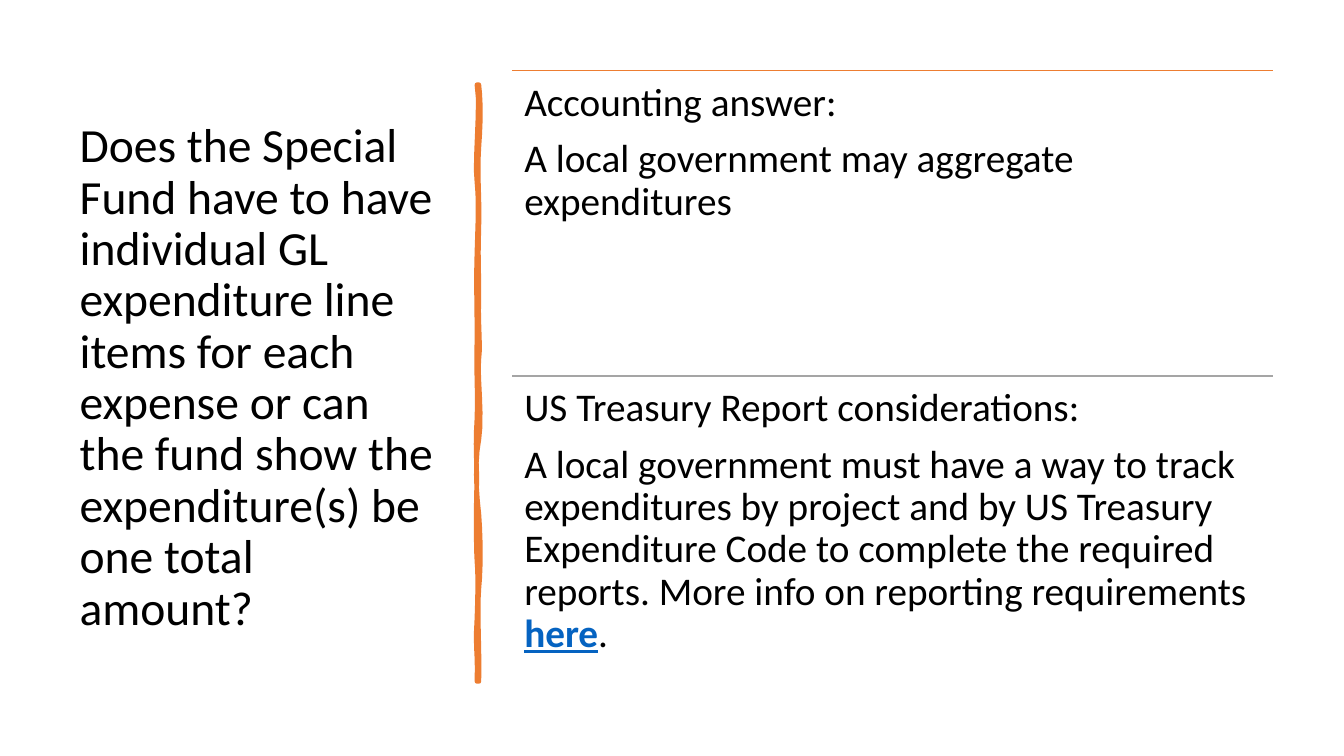
"""Build the slide on individual expenditure lines and Treasury reporting."""
from dataclasses import dataclass

from lxml import etree
from pptx import Presentation
from pptx import util as u
from pptx.dml.color import RGBColor
from pptx.enum import shapes, text
from pptx.oxml.ns import qn

FONT = "Calibri"
BLACK, ORANGE, GRAY, LINK_BLUE = "000000", "ED7D31", "A5A5A5", "0563C1"
ANSWER_LEFT, ANSWER_TOP, ANSWER_WIDTH, ANSWER_HEIGHT = 5.08, 0.7, 7.55, 3.03
CURVE_STEPS = 6
STROKE_START = (4.75, 0.84)
STROKE_CURVES = [
    (4.77, 1.02, 4.77, 1.19, 4.75, 1.46),
    (4.73, 1.73, 4.76, 1.95, 4.75, 2.26),
    (4.74, 2.57, 4.75, 2.62, 4.75, 2.94),
    (4.74, 3.25, 4.77, 3.42, 4.75, 3.56),
    (4.73, 3.7, 4.79, 4.14, 4.75, 4.36),
    (4.71, 4.57, 4.72, 4.84, 4.75, 5.1),
    (4.77, 5.36, 4.77, 5.64, 4.75, 5.84),
    (4.73, 6.03, 4.76, 6.5, 4.75, 6.76),
    (4.74, 6.76, 4.73, 6.76, 4.73, 6.76),
    (4.74, 6.46, 4.71, 6.44, 4.73, 6.13),
    (4.74, 5.83, 4.74, 5.7, 4.73, 5.57),
    (4.72, 5.44, 4.72, 4.95, 4.73, 4.77),
    (4.73, 4.59, 4.71, 4.45, 4.73, 4.15),
    (4.74, 3.86, 4.72, 3.73, 4.73, 3.35),
    (4.73, 2.98, 4.72, 2.81, 4.73, 2.5),
    (4.74, 2.18, 4.75, 2.0, 4.73, 1.81),
    (4.7, 1.63, 4.77, 1.04, 4.73, 0.84),
]


@dataclass
class Answer:
    heading: str
    body: str
    rule_color: str
    link: str = ""
    ending: str = ""


QUESTION = (
    "Does the Special Fund have to have individual GL expenditure line items for each "
    "expense or can the fund show the expenditure(s) be one total amount?"
)
ANSWERS = [
    Answer("Accounting answer:", "A local government may aggregate expenditures", ORANGE),
    Answer(
        "US Treasury Report considerations:",
        "A local government must have a way to track expenditures by project and by "
        "US Treasury Expenditure Code to complete the required reports. "
        "More info on reporting requirements ",
        GRAY,
        "here",
        ".",
    ),
]


def rgb(color: str) -> RGBColor:
    return RGBColor.from_string(color)


def format_run(run, size: float, color: str = BLACK) -> None:
    run.font.name = FONT
    run.font.size = u.Pt(size)
    run.font.color.rgb = rgb(color)


def add_question(slide) -> None:
    question = slide.shapes.title
    question.left, question.top = u.Inches(0.69), u.Inches(0.7)
    question.width, question.height = u.Inches(3.74), u.Inches(6.11)
    frame = question.text_frame
    frame.text = QUESTION
    frame.word_wrap = True
    frame.auto_size = text.MSO_AUTO_SIZE.NONE
    frame.vertical_anchor = text.MSO_ANCHOR.MIDDLE
    paragraph = frame.paragraphs[0]
    paragraph.alignment = text.PP_ALIGN.LEFT
    paragraph.line_spacing = 0.9
    format_run(paragraph.runs[0], 34)


def curve_points(start: tuple, curve: tuple) -> list[tuple]:
    x1, y1, x2, y2, x3, y3 = curve
    points = []
    for step in range(1, CURVE_STEPS + 1):
        t = step / CURVE_STEPS
        weights = ((1 - t) ** 3, 3 * t * (1 - t) ** 2, 3 * t * t * (1 - t), t ** 3)
        x = sum(w * v for w, v in zip(weights, (start[0], x1, x2, x3)))
        y = sum(w * v for w, v in zip(weights, (start[1], y1, y2, y3)))
        points.append((u.Inches(x), u.Inches(y)))
    return points


def add_brush_stroke(slide) -> None:
    start, outline = STROKE_START, []
    for curve in STROKE_CURVES:
        outline += curve_points(start, curve)
        start = curve[-2:]
    builder = slide.shapes.build_freeform(*(u.Inches(v) for v in STROKE_START))
    builder.add_line_segments(outline, close=True)
    stroke = builder.convert_to_shape()
    stroke.shadow.inherit = False
    stroke.fill.solid()
    stroke.fill.fore_color.rgb = rgb(ORANGE)
    stroke.line.color.rgb = rgb(ORANGE)
    stroke.line.width = u.Pt(3.25)
    etree.SubElement(stroke.line._get_or_add_ln(), qn("a:round"))


def add_answer(slide, answer: Answer, top: float) -> None:
    left, right, y = u.Inches(ANSWER_LEFT), u.Inches(ANSWER_LEFT + ANSWER_WIDTH), u.Inches(top)
    rule = slide.shapes.add_connector(shapes.MSO_CONNECTOR.STRAIGHT, left, y, right, y)
    rule.line.color.rgb = rgb(answer.rule_color)
    rule.line.width = u.Pt(1)
    etree.SubElement(rule._element.spPr, qn("a:effectLst"))

    box = slide.shapes.add_textbox(left, y, u.Inches(ANSWER_WIDTH), u.Inches(ANSWER_HEIGHT))
    frame = box.text_frame
    frame.word_wrap = True
    frame.margin_left = frame.margin_right = u.Inches(0.12)
    frame.margin_top = frame.margin_bottom = u.Inches(0.12)
    frame.text = f"{answer.heading}\n{answer.body}"
    for addition in filter(None, (answer.link, answer.ending)):
        frame.paragraphs[-1].add_run().text = addition
    for paragraph in frame.paragraphs:
        paragraph.line_spacing = 0.9
        paragraph.space_after = u.Pt(10)
        for run in paragraph.runs:
            is_link = run.text == answer.link
            format_run(run, 28, LINK_BLUE if is_link else BLACK)
            run.font.bold = run.font.underline = is_link


def main() -> None:
    deck = Presentation()
    deck.slide_width, deck.slide_height = u.Inches(13.33), u.Inches(7.5)
    slide = deck.slides.add_slide(deck.slide_layouts[5])
    add_question(slide)
    add_brush_stroke(slide)
    for row, answer in enumerate(ANSWERS):
        add_answer(slide, answer, ANSWER_TOP + row * ANSWER_HEIGHT)
    deck.save("out.pptx")


if __name__ == "__main__":
    main()
